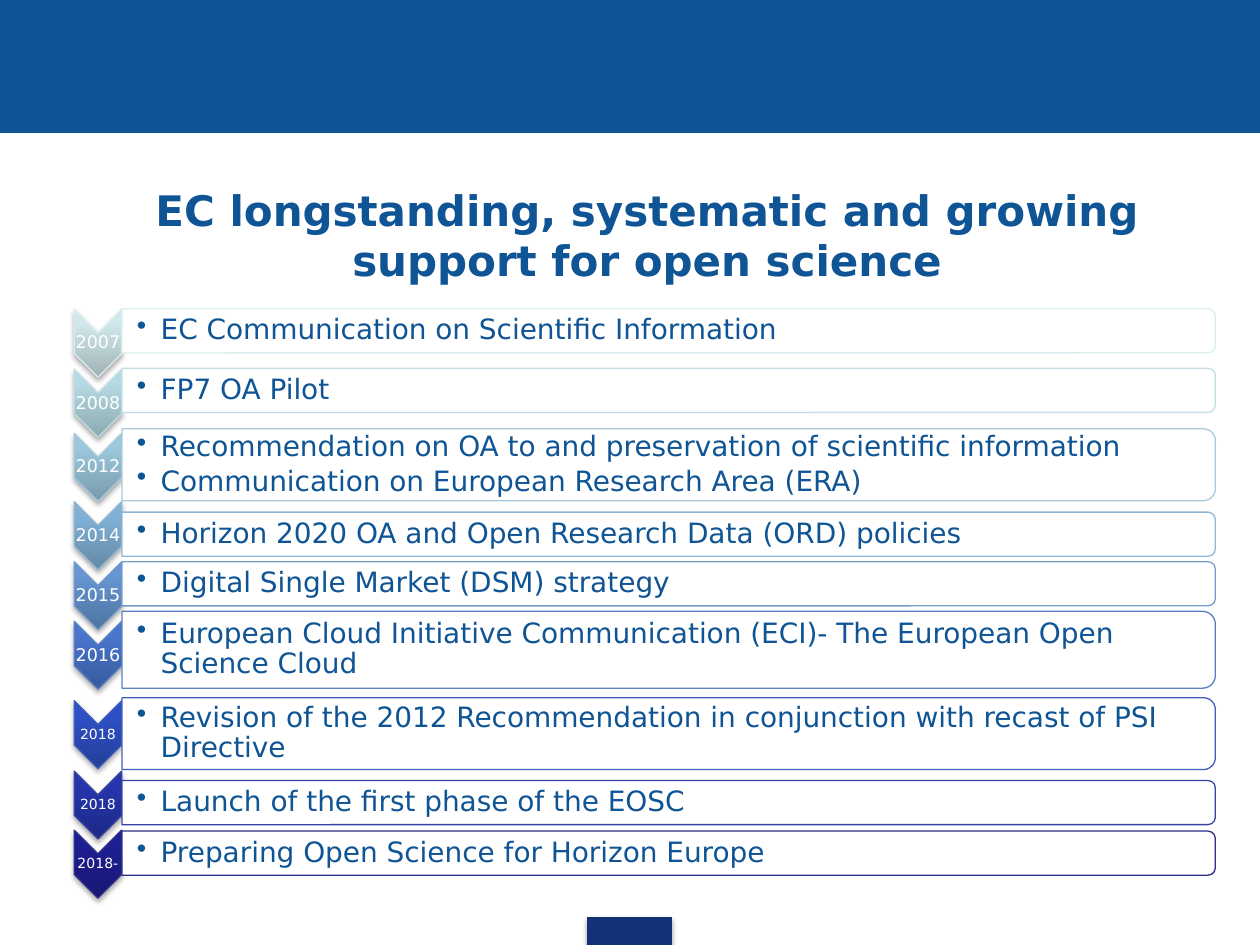
from lxml import etree
from pptx import Presentation
from pptx.dml.color import RGBColor
from pptx.enum import shapes, text
from pptx.oxml.ns import qn
from pptx.util import Cm, Pt

FONT = "DejaVu Sans"
BLUE = RGBColor(0x0F, 0x54, 0x94)
NAVY = RGBColor(0x13, 0x31, 0x76)
WHITE = RGBColor(0xFF, 0xFF, 0xFF)
KIND = shapes.MSO_SHAPE

# Box heights in cm: one line, two points, one wrapped point
ONE, TWO, WRAP = 0.89, 1.45, 1.55
LEFT, WIDE = 2.46, 22.04

# Year, size, arrow middle, box middle, box height, line, dark, light, points
ROWS = [
    ("2007", 10, 6.92, 6.67, ONE, "DAEDEF", "A0B3B5", "D0E8EB",
     ["EC Communication on Scientific Information"]),
    ("2008", 10, 8.13, 7.87, ONE, "C1DEE5", "8CA8AF", "B6DAE3",
     ["FP7 OA Pilot"]),
    ("2012", 10, 9.42, 9.37, TWO, "A8CBDC", "789AAA", "9CC8DD",
     ["Recommendation on OA to and preservation of scientific information",
      "Communication on European Research Area (ERA)"]),
    ("2014", 10, 10.8, 10.77, ONE, "8FB6D3", "6389A5", "81B1D7",
     ["Horizon 2020 OA and Open Research Data (ORD) policies"]),
    ("2015", 10, 12.01, 11.77, ONE, "759CCB", "4E73A1", "6596D1",
     ["Digital Single Market (DSM) strategy"]),
    ("2016", 10, 13.21, 13.1, WRAP, "5B7EC3", "385A9D", "4975CC",
     ["European Cloud Initiative Communication (ECI)- The European Open "
      "Science Cloud"]),
    ("2018", 8, 14.81, 14.79, TWO, "415DBA", "233E98", "2E50C6",
     ["Revision of the 2012 Recommendation in conjunction with recast of "
      "PSI Directive"]),
    ("2018", 8, 16.23, 16.18, ONE, "3743A2", "1D2985", "2635AD",
     ["Launch of the first phase of the EOSC"]),
    ("2018-", 8, 17.42, 17.2, ONE, "2D2D8A", "171771", "1E1E93",
     ["Preparing Open Science for Horizon Europe"]),
]


def apply(item, values):
    for name, value in values.items():
        setattr(item, name, value)


def add_shape(slide, kind, box, line, fill=None):
    shape = slide.shapes.add_shape(kind, *map(Cm, box))
    shape.shadow.inherit = False
    shape.line.color.rgb = line
    shape.line.width = Pt(0.75)
    if fill is not None:
        shape.fill.solid()
        shape.fill.fore_color.rgb = fill
    return shape


def add_shadow(shape):
    effects = shape._element.spPr.find(qn("a:effectLst"))
    outer = etree.SubElement(effects, qn("a:outerShdw"), blurRad=str(Pt(3.1)),
                             dist=str(Pt(1.8)), dir="5400000", rotWithShape="0")
    color = etree.SubElement(outer, qn("a:srgbClr"), val="000000")
    etree.SubElement(color, qn("a:alpha"), val="35000")


def add_text(slide, box, lines, size, color, bullet=False):
    frame = slide.shapes.add_textbox(*map(Cm, box)).text_frame
    apply(frame, dict(word_wrap=True, vertical_anchor=text.MSO_ANCHOR.MIDDLE,
                      margin_left=Cm(0.3 if bullet else 0.02),
                      margin_right=Cm(0.02), margin_top=Cm(0.02),
                      margin_bottom=Cm(0.02)))
    for i, line in enumerate(lines):
        para = frame.add_paragraph() if i else frame.paragraphs[0]
        para.text = line
        para.line_spacing = 0.9
        if bullet:
            para.space_after = Pt(2.4)
            props = para._p.get_or_add_pPr()
            props.set("marL", str(Cm(0.48)))
            props.set("indent", str(-Cm(0.48)))
            etree.SubElement(props, qn("a:buChar"), char="•")
        else:
            para.alignment = text.PP_ALIGN.CENTER
        apply(para.font, dict(name=FONT, size=Pt(size)))
        para.font.color.rgb = color


def add_row(slide, year, size, mid, center, high, line, dark, light, points):
    edge = RGBColor.from_string(line)
    # Year arrow, turned to point down
    arrow = add_shape(slide, KIND.CHEVRON, (1.29, mid - 0.48, 1.37, 0.96), edge)
    arrow.rotation = 90
    arrow.fill.gradient()
    arrow.fill.gradient_angle = 180
    for stop, spot, color in zip(arrow.fill.gradient_stops, (0, 0.8),
                                 (dark, light)):
        stop.position = spot
        stop.color.rgb = RGBColor.from_string(color)
    add_shadow(arrow)
    add_text(slide, (1.49, mid - 0.21, 0.97, 0.42), [year], size, WHITE)

    # Box with rounded right corners, turned on its side
    add_shape(slide, KIND.ROUND_2_SAME_RECTANGLE,
              (LEFT + (WIDE - high) / 2, center - WIDE / 2, high, WIDE),
              edge, WHITE).rotation = 90
    add_text(slide, (LEFT, center - high / 2 + 0.04, WIDE - 0.05, high - 0.08),
             points, 16, BLUE, bullet=True)


def add_title(slide, words):
    title = slide.shapes.title
    apply(title, dict(left=Cm(0), top=Cm(3.73), width=Cm(25.1), height=Cm(2.01)))
    frame = title.text_frame
    apply(frame, dict(text=words, word_wrap=True,
                      auto_size=text.MSO_AUTO_SIZE.NONE,
                      vertical_anchor=text.MSO_ANCHOR.MIDDLE))
    para = frame.paragraphs[0]
    para.alignment = text.PP_ALIGN.CENTER
    para._p.get_or_add_pPr().set("marL", str(Cm(0.99)))
    apply(para.font, dict(name=FONT, size=Pt(24), bold=True))
    para.font.color.rgb = BLUE


def main():
    deck = Presentation()
    apply(deck, dict(slide_width=Cm(25.4), slide_height=Cm(19.05)))
    slide = deck.slides.add_slide(deck.slide_layouts[5])

    # Top band and foot tab
    add_shape(slide, KIND.RECTANGLE, (0, 0, 25.4, 2.67), BLUE, BLUE)
    add_shadow(add_shape(slide, KIND.RECTANGLE, (11.84, 18.49, 1.7, 0.56),
                         NAVY, NAVY))

    # Timeline
    for row in ROWS:
        add_row(slide, *row)
    add_title(slide, "EC longstanding, systematic and growing "
                     "support for open science")
    deck.save("out.pptx")


if __name__ == "__main__":
    main()
